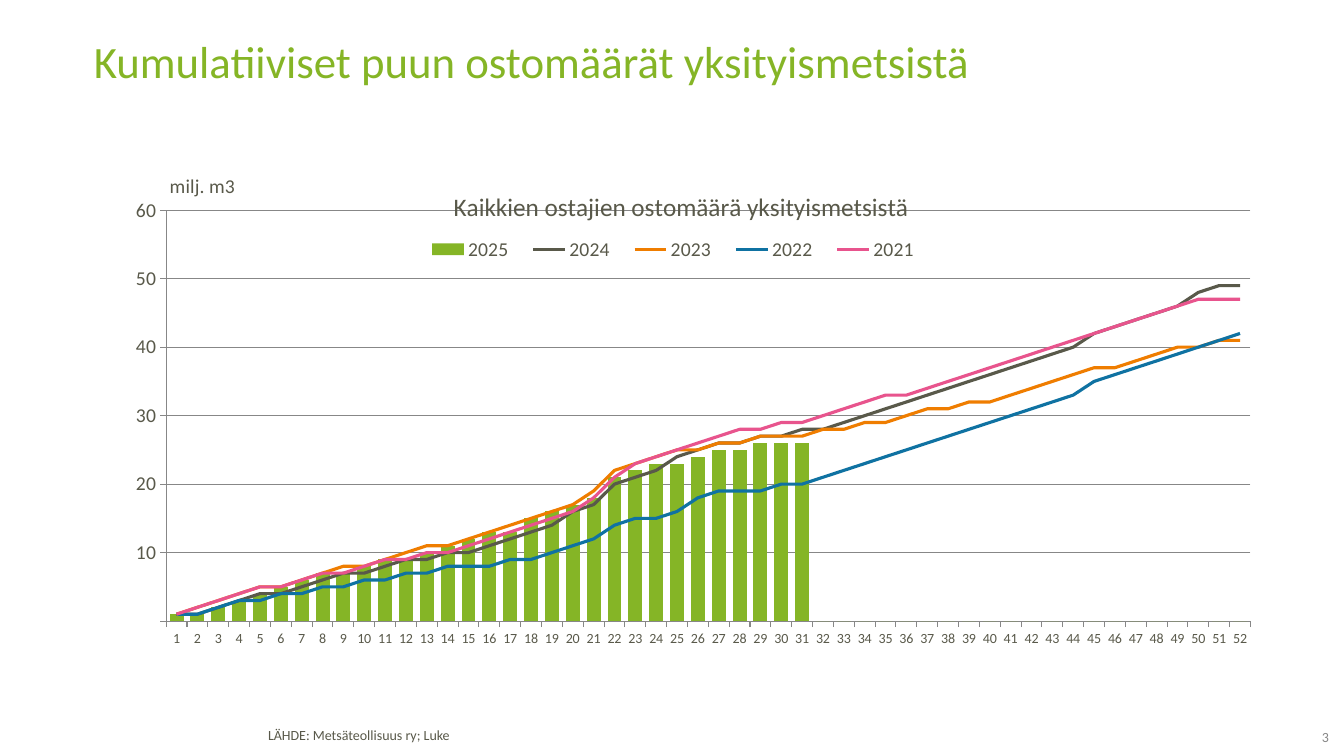
from copy import deepcopy
from dataclasses import dataclass
from itertools import accumulate

from pptx import Presentation
from pptx.chart.data import CategoryChartData
from pptx.dml.color import RGBColor
from pptx.enum.chart import XL_CHART_TYPE, XL_LEGEND_POSITION, XL_MARKER_STYLE, XL_TICK_MARK
from pptx.enum.text import MSO_ANCHOR, PP_ALIGN
from pptx.oxml import parse_xml
from pptx.oxml.ns import nsdecls, qn
from pptx.util import Inches, Pt

COLUMN = XL_CHART_TYPE.COLUMN_CLUSTERED
LEGEND_RIGHT = XL_LEGEND_POSITION.RIGHT
NO_MARKER = XL_MARKER_STYLE.NONE
TICK_OUT = XL_TICK_MARK.OUTSIDE
TOP, MIDDLE = MSO_ANCHOR.TOP, MSO_ANCHOR.MIDDLE
LEFT, RIGHT = PP_ALIGN.LEFT, PP_ALIGN.RIGHT


@dataclass(frozen=True)
class Theme:
    font: str = "Calibri"
    green: RGBColor = RGBColor(0x85, 0xB5, 0x26)
    text: RGBColor = RGBColor(0x59, 0x59, 0x4A)
    grey: RGBColor = RGBColor(0x87, 0x87, 0x87)
    orange: RGBColor = RGBColor(0xEF, 0x7D, 0x00)
    blue: RGBColor = RGBColor(0x0F, 0x72, 0xA2)
    pink: RGBColor = RGBColor(0xE8, 0x54, 0x8D)
    title: int = 32
    chart_title: int = 18
    label: int = 14
    small: int = 10


THEME = Theme()
MILLION = 1_000_000
WEEKS = 52
YEAR_COLORS = {"2025": THEME.green, "2024": THEME.text, "2023": THEME.orange,
               "2022": THEME.blue, "2021": THEME.pink}
# Growth in each week, million m3, one digit a week in groups of ten weeks
WEEKLY_GROWTH = {
    "2025": "1011111101 1011110211 1311011010 0",
    "2024": "1011101110 1101011112 1311211010 1011111111 1111211112 10",
    "2023": "1111101110 1110111111 2311101010 0101011010 1111101110 10",
    "2022": "1011010101 0101001011 1210121001 0111111111 1111211111 11",
    "2021": "1111101101 1010111111 2321111101 0111101111 1111111111 00",
}


def cumulative_volumes(growth):
    """Running total in m3, with zeros for the weeks still to come."""
    totals = [v * MILLION for v in accumulate(int(d) for d in growth.replace(" ", ""))]
    return totals + [0] * (WEEKS - len(totals))


def style_font(font, size, color):
    font.name = THEME.font
    font.size = Pt(size)
    font.bold = False
    font.color.rgb = color


def write(tf, text, size, color, align=LEFT, spacing=1.0):
    p = tf.paragraphs[0]
    p.alignment = align
    p.line_spacing = spacing
    r = p.add_run()
    r.text = text
    style_font(r.font, size, color)


def add_title(slide, box, text):
    sp = slide.shapes.title
    sp.left, sp.top, sp.width, sp.height = (Inches(v) for v in box)
    sp.text_frame.vertical_anchor = TOP
    write(sp.text_frame, text, THEME.title, THEME.green, spacing=0.8)


def add_note(slide, box, text, color, insets, anchor=TOP, align=LEFT, spacing=1.0):
    tf = slide.shapes.add_textbox(*(Inches(v) for v in box)).text_frame
    tf.word_wrap = True
    tf.vertical_anchor = anchor
    tf.margin_left, tf.margin_top, tf.margin_right, tf.margin_bottom = (
        Inches(v) for v in insets)
    write(tf, text, THEME.small, color, align, spacing)


def place(element, after, x, y, w=None, h=None, inner=False):
    """Give a chart part a manual layout, as fractions of the chart area."""
    for old in element.findall(qn("c:layout")):
        element.remove(old)
    target = '<c:layoutTarget val="inner"/>' if inner else ""
    modes = '<c:xMode val="edge"/><c:yMode val="edge"/>'
    sizes = "".join(f'<c:{tag} val="{v}"/>' for tag, v in zip("xywh", (x, y, w, h))
                    if v is not None)
    layout = parse_xml(f'<c:layout {nsdecls("c")}><c:manualLayout>{target}{modes}{sizes}'
                       '</c:manualLayout></c:layout>')
    if after:
        element.find(qn(after)).addnext(layout)
    else:
        element.insert(0, layout)


def move_to_lines(plot_area):
    """Turn every series but the first into a line on the same axes."""
    bars = plot_area.find(qn("c:barChart"))
    lines = parse_xml(f'<c:lineChart {nsdecls("c")}><c:grouping val="standard"/>'
                      '<c:varyColors val="0"/><c:marker val="1"/></c:lineChart>')
    marker = lines.find(qn("c:marker"))
    for ser in bars.findall(qn("c:ser"))[1:]:
        for invert in ser.findall(qn("c:invertIfNegative")):
            ser.remove(invert)
        marker.addprevious(ser)
    for ax_id in bars.findall(qn("c:axId")):
        lines.append(deepcopy(ax_id))
    bars.addnext(lines)


def style_axes(chart):
    weeks, volume = chart.category_axis, chart.value_axis
    for axis, size in ((weeks, THEME.small), (volume, THEME.label)):
        axis.major_tick_mark = TICK_OUT
        axis.format.line.color.rgb = THEME.grey
        style_font(axis.tick_labels.font, size, THEME.text)
    skip = parse_xml(f'<c:tickLblSkip {nsdecls("c")} val="1"/>')
    weeks._element.find(qn("c:noMultiLvlLbl")).addprevious(skip)

    volume.minimum_scale, volume.maximum_scale = 0, 60 * MILLION
    volume.major_unit = 10 * MILLION
    volume.tick_labels.number_format = "#,,"
    volume.tick_labels.number_format_is_linked = False
    volume.has_major_gridlines = True
    volume.major_gridlines.format.line.color.rgb = THEME.grey

    tf = volume.axis_title.text_frame
    write(tf, "milj. m3", THEME.label, THEME.text)
    tf._txBody.bodyPr.set("rot", "0")
    tf._txBody.bodyPr.set("vert", "horz")
    place(volume.axis_title._element, "c:tx", 0.07, 0.02)


def style_series(chart):
    bars, lines = chart.plots
    bars.gap_width = 50
    bars.vary_by_categories = False
    for s in bars.series:
        s.format.fill.solid()
        s.format.fill.fore_color.rgb = YEAR_COLORS[s.name]
    for s in lines.series:
        s.format.line.color.rgb = YEAR_COLORS[s.name]
        s.format.line.width = Pt(2.25)
        s.marker.style = NO_MARKER
        s.smooth = False


def add_purchase_chart(slide, box):
    data = CategoryChartData(number_format="#,,")
    data.categories = [str(week) for week in range(1, WEEKS + 1)]
    for year, growth in WEEKLY_GROWTH.items():
        data.add_series(year, cumulative_volumes(growth))
    chart = slide.shapes.add_chart(COLUMN, *(Inches(v) for v in box), data).chart
    style_font(chart.font, THEME.small, THEME.text)

    plot_area = chart._chartSpace.chart.plotArea
    move_to_lines(plot_area)
    place(plot_area, None, 0.07, 0.1, 0.92, 0.79, inner=True)
    style_series(chart)
    style_axes(chart)

    chart.has_title = True
    write(chart.chart_title.text_frame, "Kaikkien ostajien ostomäärä yksityismetsistä",
          THEME.chart_title, THEME.text)
    place(chart.chart_title._element, "c:tx", 0.31, 0.05)

    chart.has_legend = True
    chart.legend.position = LEGEND_RIGHT
    chart.legend.include_in_layout = False
    style_font(chart.legend.font, THEME.label, THEME.text)
    place(chart.legend._element, "c:legendPos", 0.28, 0.14, 0.44, 0.07)


def main():
    prs = Presentation()
    prs.slide_width, prs.slide_height = Inches(13.33), Inches(7.5)
    slide = prs.slides.add_slide(prs.slide_layouts[5])
    add_title(slide, (0.83, 0.39, 11.69, 0.98),
              "Kumulatiiviset puun ostomäärät yksityismetsistä")
    add_purchase_chart(slide, (0.83, 1.57, 11.69, 5.16))
    add_note(slide, (2.56, 7.18, 7.18, 0.27), "LÄHDE: Metsäteollisuus ry; Luke",
             THEME.text, (0.1, 0.05, 0.1, 0.05), spacing=0.85)
    add_note(slide, (12.65, 7.24, 0.53, 0.19), "3", THEME.grey,
             (0, 0, 0, 0.04), MIDDLE, RIGHT)
    prs.save("out.pptx")


if __name__ == "__main__":
    main()
